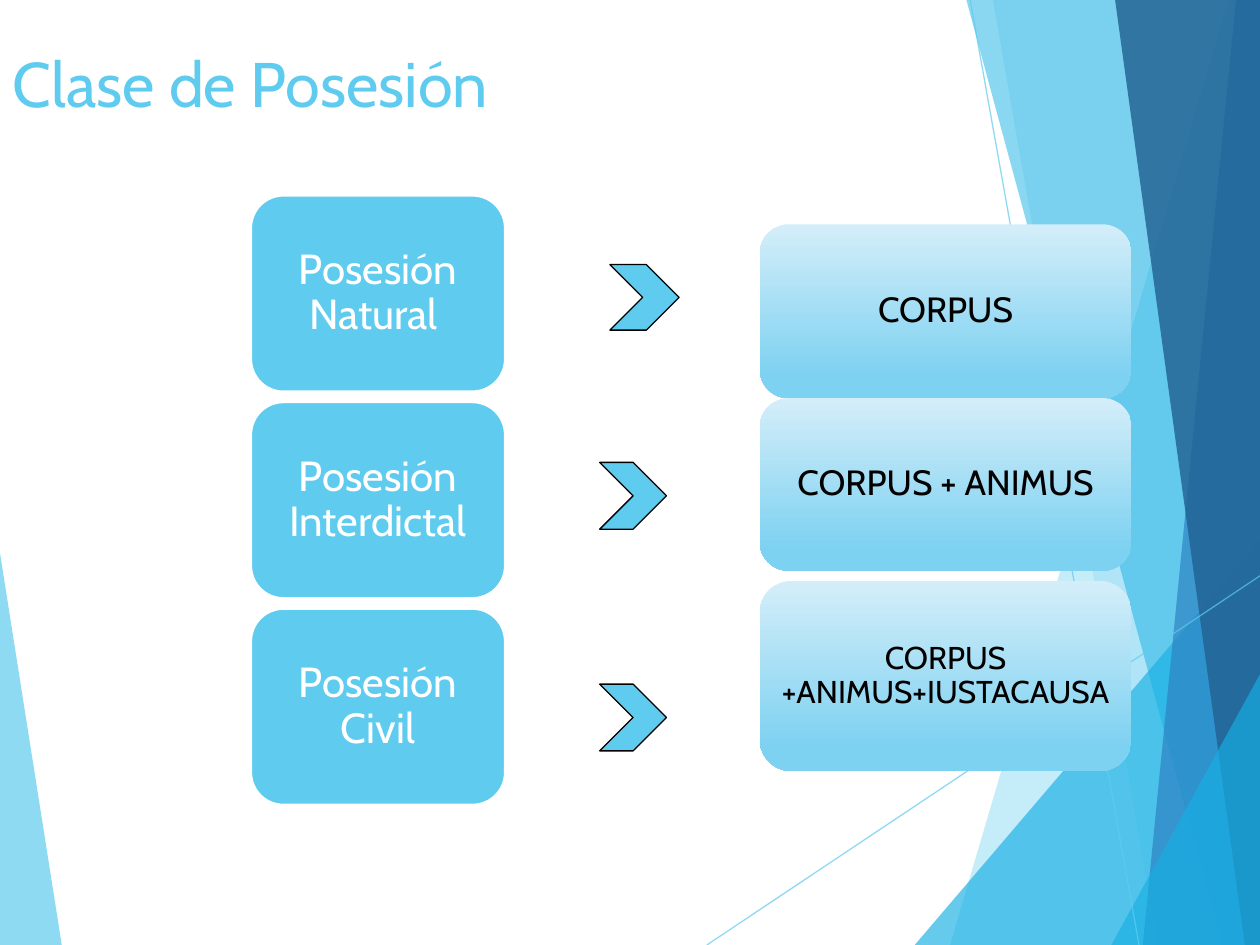
from lxml.etree import SubElement
from pptx import Presentation
from pptx.dml.color import RGBColor
from pptx.enum.shapes import MSO_CONNECTOR, MSO_SHAPE
from pptx.enum.text import MSO_ANCHOR, PP_ALIGN
from pptx.oxml.ns import qn
from pptx.util import Inches, Pt

SKY, CYAN, BLUE, NAVY = "5FCBEF", "17B0E4", "2E83C3", "226292"
FACETS = [
    ([(0, 4.39), (0.49, 7.5), (0, 7.5)], SKY, 70),
    ([(9.75, 0), (7.54, 7.5), (10, 7.5), (10, 0)], SKY, 36),
    ([(7.88, 0), (9.19, 7.5), (10, 7.5), (10, 0)], SKY, 20),
    ([(7.26, 7.5), (10, 4.29), (10, 7.5)], CYAN, 66),
    ([(7.67, 0), (9.7, 7.5), (10, 7.5), (10, 0)], CYAN, 50),
    ([(9.81, 0), (9.07, 7.5), (10, 7.5), (10, 0)], BLUE, 70),
    ([(8.85, 0), (9.88, 7.5), (10, 7.5), (10, 0)], NAVY, 82),
    ([(8.82, 7.5), (10, 5.35), (10, 7.5)], CYAN, 66),
]
RAYS = [(5.61, 7.5, 10, 4.57), (7.7, 0, 9.04, 7.5)]
KINDS = ["Posesión Natural ", "Posesión Interdictal", "Posesión Civil"]
CHEVRONS = [(4.84, 2.1, 0.55, 0.52), (4.76, 3.67, 0.53, 0.53), (4.76, 5.43, 0.53, 0.53)]
ELEMENTS = [
    ("CORPUS", 1.78, 1.38, 20),
    ("CORPUS + ANIMUS", 3.16, 1.37, 20),
    ("CORPUS +ANIMUS+IUSTACAUSA", 4.61, 1.51, 18),
]


def rgb(value):
    """Turn a hex string into a colour."""
    return RGBColor.from_string(value)


def set_alpha(shape, percent):
    """Make the solid colour of a shape or line partly transparent."""
    for color in shape._element.spPr.iter(qn("a:srgbClr")):
        SubElement(color, qn("a:alpha"), val=str(percent * 1000))


def add_backdrop(page):
    """Draw the translucent facets and thin rays around the page edges."""
    for points, color, opacity in FACETS:
        corners = [(x * 100, y * 100) for x, y in points]
        builder = page.shapes.build_freeform(*corners[0], scale=Inches(0.01))
        builder.add_line_segments(corners[1:], close=True)
        facet = builder.convert_to_shape()
        facet.shadow.inherit = False
        facet.fill.solid()
        facet.fill.fore_color.rgb = rgb(color)
        set_alpha(facet, opacity)
        facet.line.fill.background()
    for ends in RAYS:
        ray = page.shapes.add_connector(MSO_CONNECTOR.STRAIGHT, *map(Inches, ends))
        ray.line.color.rgb = rgb(SKY)
        ray.line.width = Pt(0.75)
        set_alpha(ray, 70)
        SubElement(ray._element.spPr, qn("a:effectLst"))


def format_text(frame, size, color):
    """Apply the font, size and colour to every run."""
    for para in frame.paragraphs:
        for span in para.runs:
            span.font.name = "Cabin"
            span.font.size = Pt(size)
            span.font.color.rgb = rgb(color)


def add_title(page, text, left, top, width, height):
    """Place the title placeholder in the given box."""
    title = page.shapes.title
    title.left, title.top = Inches(left), Inches(top)
    title.width, title.height = Inches(width), Inches(height)
    frame = title.text_frame
    frame.text = text
    frame.vertical_anchor = MSO_ANCHOR.TOP
    frame.paragraphs[0].alignment = PP_ALIGN.LEFT
    format_text(frame, 36, SKY)


def add_shape(page, kind, box):
    """Add a shadowless preset shape with a sky fill."""
    shape = page.shapes.add_shape(kind, *map(Inches, box))
    shape.shadow.inherit = False
    shape.fill.solid()
    shape.fill.fore_color.rgb = rgb(SKY)
    return shape


def add_card(page, text, box, size, color):
    """Add a rounded card with centred text."""
    card = add_shape(page, MSO_SHAPE.ROUNDED_RECTANGLE, box)
    frame = card.text_frame
    frame.text = text
    frame.word_wrap = True
    frame.vertical_anchor = MSO_ANCHOR.MIDDLE
    frame.margin_left = frame.margin_right = Inches(0.07)
    frame.margin_top = frame.margin_bottom = Inches(0.04)
    para = frame.paragraphs[0]
    para.alignment = PP_ALIGN.CENTER
    para.line_spacing = 0.9
    format_text(frame, size, color)
    return card


def add_kinds(page, left, top, width, height, step):
    """Stack the kinds of possession at equal steps."""
    for index, text in enumerate(KINDS):
        box = (left, top + index * step, width, height)
        card = add_card(page, text, box, 24, "FFFFFF")
        card.line.color.rgb = rgb("FFFFFF")
        card.line.width = Pt(1.5)


def add_chevrons(page):
    """Point each kind towards its elements."""
    for box in CHEVRONS:
        chevron = add_shape(page, MSO_SHAPE.CHEVRON, box)
        chevron.line.color.rgb = rgb("000000")
        chevron.line.width = Pt(0.75)


def add_elements(page, left, width):
    """Stack the gradient cards that name the elements."""
    for text, top, height, size in ELEMENTS:
        card = add_card(page, text, (left, top, width, height), size, "000000")
        card.line.fill.background()
        card.fill.gradient()
        card.fill.gradient_angle = 270
        shades = [(0, "D4EEF9"), (0.88, "7DD1F1")]
        for stop, (position, color) in zip(card.fill.gradient_stops, shades):
            stop.position = position
            stop.color.rgb = rgb(color)


def main():
    """Build and save the deck."""
    deck = Presentation()
    deck.slide_width, deck.slide_height = Inches(10), Inches(7.5)
    page = deck.slides.add_slide(deck.slide_layouts[5])
    add_backdrop(page)
    add_title(page, "Clase de Posesión", 0, 0.3, 9, 1.25)
    add_kinds(page, 1.99, 1.55, 2.02, 1.56, 1.64)
    add_chevrons(page)
    add_elements(page, 6.03, 2.95)
    deck.save("out.pptx")


if __name__ == "__main__":
    main()
